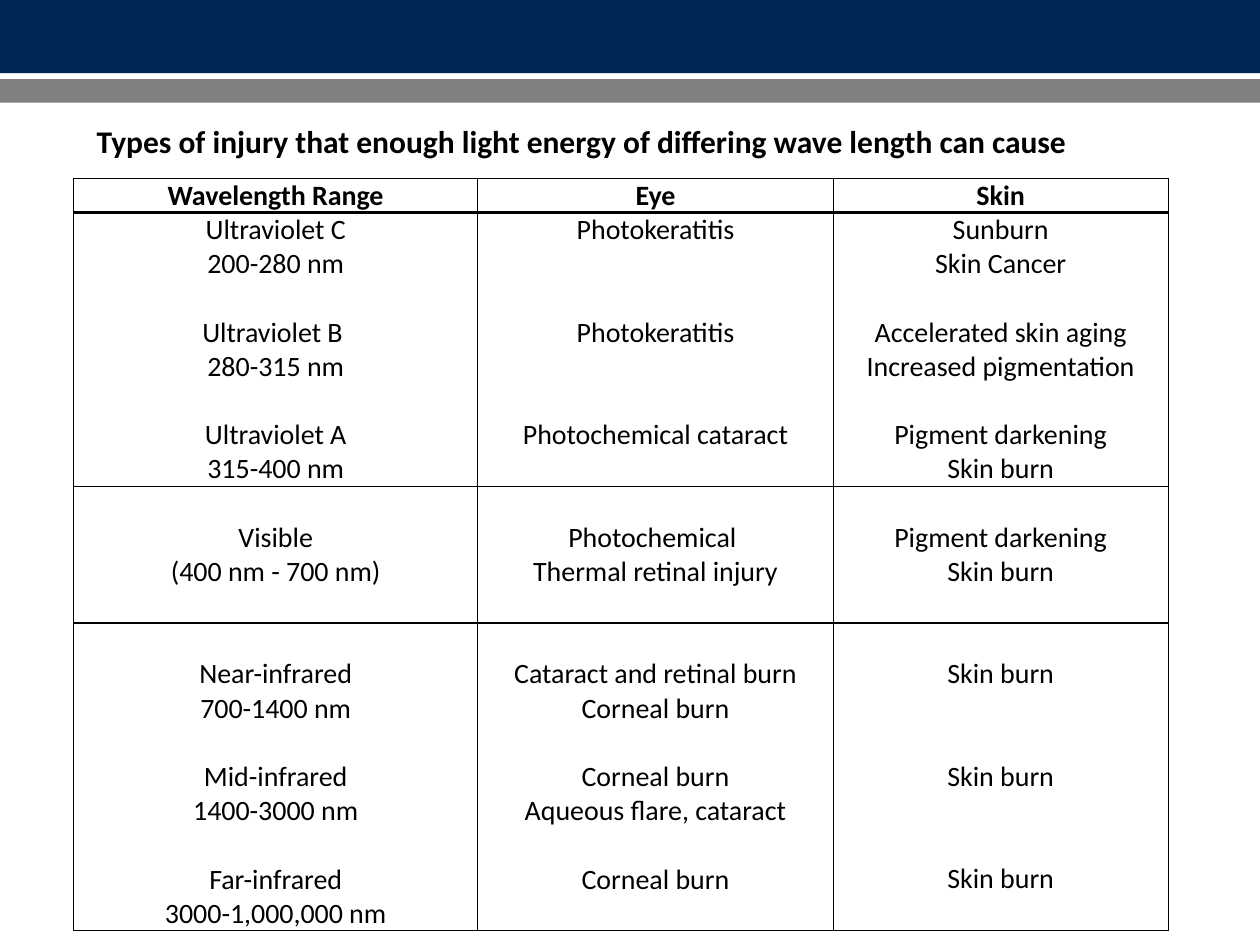
from lxml.etree import SubElement as Sub
from pptx import Presentation
from pptx.dml.color import RGBColor as RGB
from pptx.enum.shapes import MSO_SHAPE as Shape
from pptx.enum.text import MSO_AUTO_SIZE as Fit, PP_ALIGN as Align
from pptx.oxml.ns import qn
from pptx.util import Pt

NAVY = RGB(0x00, 0x26, 0x54)
GRAY = RGB(0x80, 0x80, 0x80)
BLACK = RGB(0, 0, 0)
FACE = "Calibri"
SIZE = 16
LINE = 19.53  # height of one line of table text
THIN, THICK = 0.75, 2.25
SLOT = 2  # lines that each band of wavelengths takes up

TITLE = "Types of injury that enough light energy of differing wave length can cause"
COLS = [231.1, 203, 191.5]
HEAD = ["Wavelength Range", "Eye", "Skin"]

# Each row: height, lines left free on top, then one list of bands per column.
ROWS = [
    (19.4, 0, [[[name]] for name in HEAD]),
    (153.4, 0, [
        [["Ultraviolet C", "200-280 nm"],
         ["Ultraviolet B ", "280-315 nm"],
         ["Ultraviolet A", "315-400 nm"]],
        [["Photokeratitis"], ["Photokeratitis"], ["Photochemical cataract"]],
        [["Sunburn", "Skin Cancer"],
         ["Accelerated skin aging", "Increased pigmentation"],
         ["Pigment darkening", "Skin burn"]],
    ]),
    (78, 1, [
        [["Visible", "(400 nm - 700 nm)"]],
        [["Photochemical ", "Thermal retinal injury"]],
        [["Pigment darkening", "Skin burn"]],
    ]),
    (172.8, 1, [
        [["Near-infrared", "700-1400 nm"],
         ["Mid-infrared", "1400-3000 nm"],
         ["Far-infrared", "3000-1,000,000 nm"]],
        [["Cataract and retinal burn", "Corneal burn"],
         ["Corneal burn", "Aqueous flare, cataract"],
         ["Corneal burn"]],
        [["Skin burn"], ["Skin burn"], ["Skin burn"]],
    ]),
]


def add_bar(slide, top, height, color):
    bar = slide.shapes.add_shape(Shape.RECTANGLE, 0, Pt(top), Pt(720), Pt(height))
    bar.shadow.inherit = False
    bar.fill.solid()
    bar.fill.fore_color.rgb = color
    bar.line.fill.background()


def add_run(para, text, size, bold):
    run = para.add_run()
    run.text = text
    font = run.font
    font.name, font.size, font.bold = FACE, Pt(size), bold
    font.color.rgb = BLACK


def add_title(slide):
    box = slide.shapes.add_textbox(Pt(48.2), Pt(66.2), Pt(569.5), Pt(28.8))
    frame = box.text_frame
    frame.word_wrap = False
    frame.auto_size = Fit.SHAPE_TO_FIT_TEXT
    add_run(frame.paragraphs[0], TITLE, 18, True)


def set_edges(cell, top, base):
    props = cell._tc.get_or_add_tcPr()
    for side, width in zip("LRTB", (THIN, THIN, top, base)):
        edge = Sub(props, qn(f"a:ln{side}"), w=str(int(Pt(width))))
        fill = Sub(edge, qn("a:solidFill"))
        Sub(fill, qn("a:srgbClr"), val=str(BLACK))


def fill_cell(cell, bands, lead, bold):
    """Write the bands, each starting at its own slot of lines."""
    cell.margin_left = cell.margin_right = Pt(3)
    cell.margin_top, cell.margin_bottom = Pt(lead * LINE), 0
    frame = cell.text_frame
    gap = 0
    for band in bands:
        for text in band:
            para = frame.add_paragraph() if frame.text else frame.paragraphs[0]
            para.alignment = Align.CENTER
            para.space_before = Pt(gap)
            add_run(para, text, SIZE, bold)
            gap = 0
        gap = (SLOT + 1 - len(band)) * LINE


def add_grid(slide):
    high = sum(row[0] for row in ROWS)
    frame = slide.shapes.add_table(len(ROWS), len(COLS), Pt(42), Pt(102),
                                   Pt(sum(COLS)), Pt(high))
    table = frame.table
    table.first_row = table.horz_banding = False
    for col, width in zip(table.columns, COLS):
        col.width = Pt(width)
    for i, (height, lead, cells) in enumerate(ROWS):
        table.rows[i].height = Pt(height)
        for j, bands in enumerate(cells):
            cell = table.cell(i, j)
            set_edges(cell, THICK if i == 1 else THIN, THICK if i == 0 else THIN)
            cell.fill.background()
            fill_cell(cell, bands, lead, i == 0)


def main():
    deck = Presentation()
    deck.slide_width, deck.slide_height = Pt(720), Pt(540)
    slide = deck.slides.add_slide(deck.slide_layouts[6])
    add_bar(slide, 0, 41.8, NAVY)
    add_bar(slide, 45.2, 13.5, GRAY)
    add_grid(slide)
    add_title(slide)
    deck.save("out.pptx")


if __name__ == "__main__":
    main()
